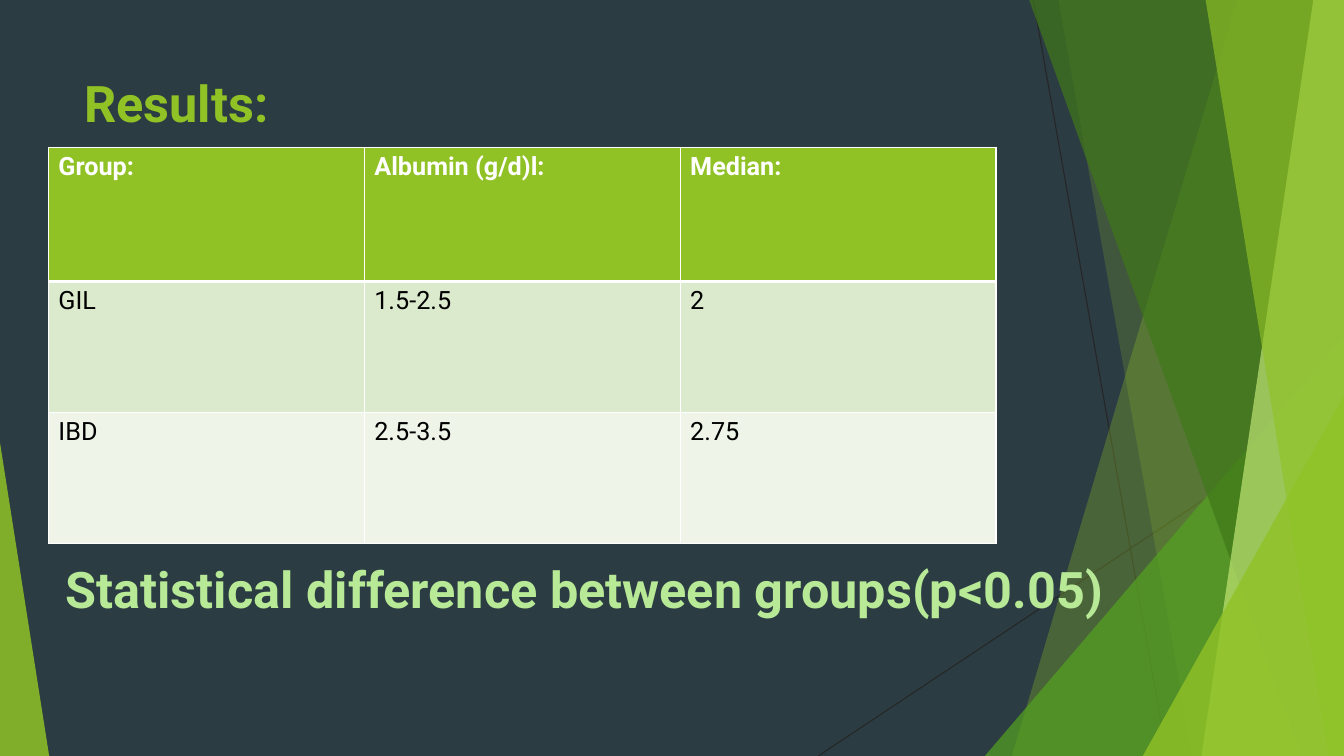
import pptx
import pptx.util
import pptx.dml.color
import pptx.enum.shapes
import pptx.enum.text
import pptx.oxml
import pptx.oxml.ns
from lxml import etree

Cm = pptx.util.Cm
Pt = pptx.util.Pt
qn = pptx.oxml.ns.qn
rgb = pptx.dml.color.RGBColor.from_string

theme = {
    "font": "Roboto", "large": 36, "body": 18,
    "back": "2C3C43", "line": "262626", "lime": "90C226",
    "green": "54A021", "dark": "3F7819", "pale": "C0E474",
    "note": "B7E996", "white": "FFFFFF", "black": "000000",
    "bands": ["90C226", "DBE9CD", "EEF4E8"],
}


def paint(shape, colour, alpha):
    shape.shadow.inherit = False
    shape.line.fill.background()
    shape.fill.solid()
    shape.fill.fore_color.rgb = rgb(colour)
    tone = shape.fill._xPr.find(qn("a:solidFill"))[0]
    etree.SubElement(tone, qn("a:alpha"), val=str(alpha * 1000))


def write(frame, text, size, colour, bold):
    para = frame.paragraphs[0]
    para.text = text
    para.font.name = theme["font"]
    para.font.size = Pt(size)
    para.font.bold = bold
    para.font.color.rgb = rgb(colour)
    return para


deck = pptx.Presentation()
deck.slide_width = Cm(33.87)
deck.slide_height = Cm(19.05)
slide = deck.slides.add_slide(deck.slide_layouts[6])
slide.background.fill.solid()
slide.background.fill.fore_color.rgb = rgb(theme["back"])
shapes = slide.shapes
right, base = Cm(33.87), Cm(19.05)

for ends in [(26.04, 0, 29.41, 19.05), (33.87, 10.24, 20.62, 19.05)]:
    line = shapes.add_connector(
        pptx.enum.shapes.MSO_CONNECTOR.STRAIGHT, *map(Cm, ends))
    line.line.color.rgb = rgb(theme["line"])
    line.line.width = Pt(0.75)
    etree.SubElement(line._element.spPr, qn("a:effectLst"))

facets = [
    ("band", (31.19, 25.5), "lime", 30),
    ("band", (26.67, 30.05), "lime", 20),
    ("wedge", (24.82, 8.46, 9.05, 10.59, 1), "green", 72),
    ("band", (25.93, 32.79), "dark", 70),
    ("band", (33.1, 30.28), "pale", 70),
    ("band", (30.38, 33.48), "lime", 65),
    ("wedge", (28.8, 9.98, 5.07, 9.07, 1), "lime", 80),
    ("wedge", (0, 11.15, 1.24, 7.9, 0), "lime", 85),
]
for kind, form, colour, alpha in facets:
    if kind == "band":
        top, foot = map(Cm, form)
        edge = Cm(-0.02)
        pen = shapes.build_freeform(top, edge)
        pen.add_line_segments([(right, edge), (right, base), (foot, base)])
        facet = pen.convert_to_shape()
    else:
        facet = shapes.add_shape(
            pptx.enum.shapes.MSO_SHAPE.ISOSCELES_TRIANGLE, *map(Cm, form[:4]))
        facet.adjustments[0] = form[4]
    paint(facet, theme[colour], alpha)

title = shapes.add_textbox(Cm(1.88), Cm(1.7), Cm(23.88), Cm(3.66)).text_frame
title.word_wrap = True
write(title, "Results:", theme["large"], theme["lime"], True)

rows = [
    ["Group:", "Albumin (g/d)l:", "Median:"],
    ["GIL", "1.5-2.5", "2"],
    ["IBD", "2.5-3.5", "2.75"],
]
table = shapes.add_table(3, 3, Cm(1.22), Cm(3.71), Cm(23.88), Cm(9.98)).table
for col in table.columns:
    col.width = Cm(7.96)
for r, row in enumerate(rows):
    head = r == 0
    table.rows[r].height = Cm(3.38 if head else 3.3)
    for c, text in enumerate(row):
        cell = table.cell(r, c)
        write(cell.text_frame, text, theme["body"],
              theme["white" if head else "black"], head)
        props = cell._tc.get_or_add_tcPr()
        for side in "LRTB":
            thick = (head and side == "B") or (r == 1 and side == "T")
            rule = etree.SubElement(
                props, qn("a:ln" + side), w=str(Pt(3 if thick else 1)))
            fill = etree.SubElement(rule, qn("a:solidFill"))
            etree.SubElement(fill, qn("a:srgbClr"), val=theme["white"])
        cell.fill.solid()
        cell.fill.fore_color.rgb = rgb(theme["bands"][r])

note = shapes.add_textbox(Cm(0.64), Cm(13.94), Cm(28.19), Cm(3.33)).text_frame
note.word_wrap = False
para = write(note, "Statistical difference between groups(p<0.05)",
             theme["large"], theme["note"], True)
para.alignment = pptx.enum.text.PP_ALIGN.CENTER

deck.save("out.pptx")
